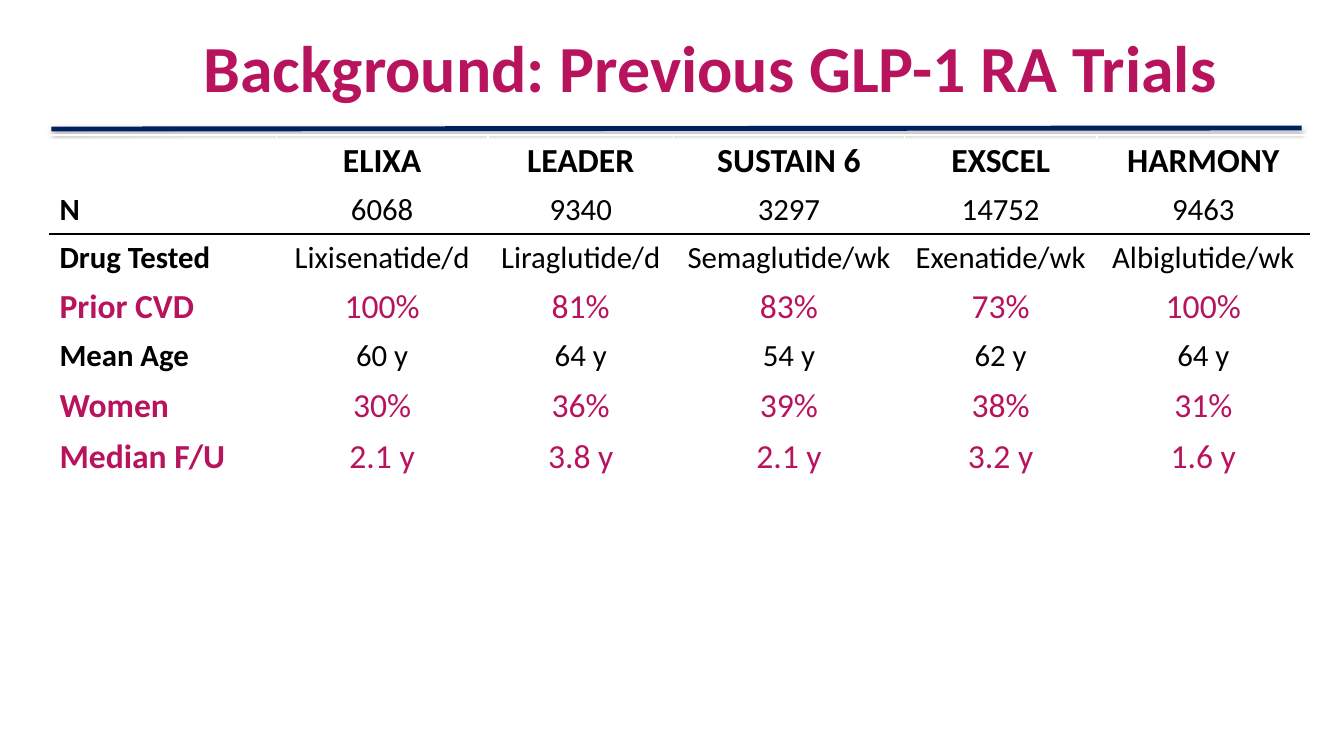
import pptx
import pptx.dml.color
import pptx.enum.shapes
import pptx.enum.text
import pptx.oxml
import pptx.oxml.ns
import pptx.util
from pptx.util import Inches

COLORS = {"accent": "B8145E", "text": "000000", "rule": "002060"}
FONT = "Calibri"
NS = pptx.oxml.ns.nsdecls("a")

COL_WIDTHS = [2.25, 2.1, 1.84, 2.29, 1.91, 2.11]
ROW_HEIGHT = 0.43
EMPTY_ROWS = 5
TRIALS = [
    ["", "ELIXA", "LEADER", "SUSTAIN 6", "EXSCEL", "HARMONY"],
    ["N", "6068", "9340", "3297", "14752", "9463"],
    ["Drug Tested", "Lixisenatide/d", "Liraglutide/d", "Semaglutide/wk",
     "Exenatide/wk", "Albiglutide/wk"],
    ["Prior CVD", "100%", "81%", "83%", "73%", "100%"],
    ["Mean Age", "60 y", "64 y", "54 y", "62 y", "64 y"],
    ["Women", "30%", "36%", "39%", "38%", "31%"],
    ["Median F/U", "2.1 y", "3.8 y", "2.1 y", "3.2 y", "1.6 y"],
]
HIGHLIGHTED = {"Prior CVD", "Women", "Median F/U"}
RULES_BELOW = {0: 1, 1: 1.5}  # row index: line width in points


def rgb(name):
    return pptx.dml.color.RGBColor.from_string(COLORS[name])


def style_runs(p, size, color, bold):
    for r in p.runs:
        r.font.name = FONT
        r.font.size = pptx.util.Pt(size)
        r.font.bold = bold
        r.font.color.rgb = rgb(color)


def add_title(slide, text):
    s = slide.shapes.add_textbox(Inches(1.92), Inches(0.08), Inches(11.23), Inches(1.25))
    tf = s.text_frame
    tf.word_wrap = True
    tf.vertical_anchor = pptx.enum.text.MSO_ANCHOR.MIDDLE
    tf.text = text
    p = tf.paragraphs[0]
    p.line_spacing = 0.9
    style_runs(p, 47, "accent", True)


def add_title_rule(slide):
    s = slide.shapes.add_connector(
        pptx.enum.shapes.MSO_CONNECTOR.STRAIGHT,
        Inches(0.51), Inches(1.28), Inches(12.91), Inches(1.27))
    s.line.color.rgb = rgb("rule")
    s.line.width = pptx.util.Pt(3.5)
    # Soft shadow straight below the rule
    s._element.spPr.append(pptx.oxml.parse_xml(
        f'<a:effectLst {NS}><a:outerShdw blurRad="{pptx.util.Pt(3.1)}" '
        f'dist="{pptx.util.Pt(1.8)}" dir="5400000" rotWithShape="0">'
        f'<a:srgbClr val="{COLORS["text"]}"><a:alpha val="35000"/></a:srgbClr>'
        f'</a:outerShdw></a:effectLst>'))


def add_bottom_border(cell, width):
    # Border elements precede the fill in the cell properties
    cell._tc.get_or_add_tcPr().insert(0, pptx.oxml.parse_xml(
        f'<a:lnB {NS} w="{pptx.util.Pt(width)}"><a:solidFill>'
        f'<a:srgbClr val="{COLORS["text"]}"/></a:solidFill></a:lnB>'))


def fill_cell(cell, text, size, color, bold, centered):
    cell.text = text
    p = cell.text_frame.paragraphs[0]
    if centered:
        p.alignment = pptx.enum.text.PP_ALIGN.CENTER
    style_runs(p, size, color, bold)


def add_trials_table(slide):
    n_rows = len(TRIALS) + EMPTY_ROWS
    table = slide.shapes.add_table(
        n_rows, len(COL_WIDTHS), Inches(0.49), Inches(1.34),
        Inches(sum(COL_WIDTHS)), Inches(n_rows * ROW_HEIGHT)).table
    table.first_row = table.horz_banding = False
    for column, width in zip(table.columns, COL_WIDTHS):
        column.width = Inches(width)
    for row in table.rows:
        row.height = Inches(ROW_HEIGHT)
    for cell in table.iter_cells():
        cell.fill.background()

    for i, values in enumerate(TRIALS):
        highlighted = values[0] in HIGHLIGHTED
        size = 24 if i == 0 or highlighted else 22
        color = "accent" if highlighted else "text"
        for j, value in enumerate(values):
            cell = table.cell(i, j)
            if value:
                fill_cell(cell, value, size, color, i == 0 or j == 0, j > 0)
            if i in RULES_BELOW:
                add_bottom_border(cell, RULES_BELOW[i])


def main():
    prs = pptx.Presentation()
    prs.slide_width, prs.slide_height = Inches(13.33), Inches(7.5)
    slide = prs.slides.add_slide(prs.slide_layouts[6])
    add_title_rule(slide)
    add_trials_table(slide)
    add_title(slide, "Background: Previous GLP-1 RA Trials")
    prs.save("out.pptx")


if __name__ == "__main__":
    main()
